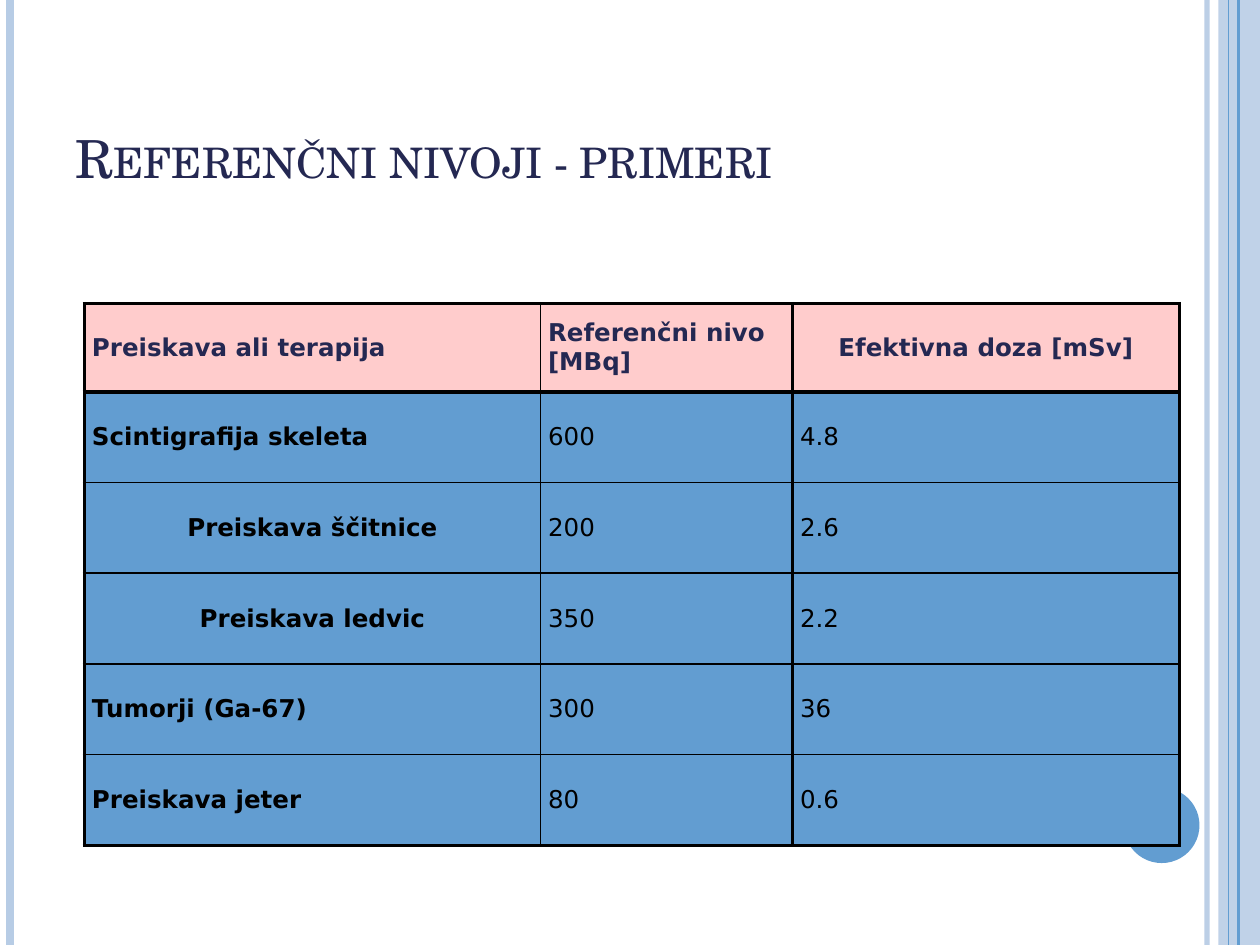
from lxml.etree import SubElement as Sub
from pptx import Presentation
from pptx.dml.color import RGBColor as RGB
from pptx.enum.shapes import MSO_CONNECTOR as LINK, MSO_SHAPE as SHAPE
from pptx.enum.text import MSO_ANCHOR as ANCHOR, PP_ALIGN as ALIGN
from pptx.oxml.ns import qn
from pptx.util import Inches, Pt

HUES = {"navy": "242852", "blue": "629DD1", "pale": "B7CCE5",
        "pink": "FFCCCC", "black": "000000"}


def write(frame, text, font="DejaVu Sans", size=14, hue="black", bold=False,
          align=ALIGN.LEFT, before=0, caps=False):
    par = frame.paragraphs[0]
    par.alignment = align
    par.space_before = Pt(before)
    run = par.add_run()
    run.text = text
    run.font.name = font
    run.font.size = Pt(size)
    run.font.bold = bold
    run.font.color.rgb = RGB.from_string(HUES[hue])
    if caps:
        run.font._element.set("cap", "small")


def tint(fill, hue, alpha=100):
    fill.solid()
    fill.fore_color.rgb = RGB.from_string(HUES[hue])
    if alpha < 100:
        node = fill._xPr.find(qn("a:solidFill"))[0]
        Sub(node, qn("a:alpha"), val=str(alpha * 1000))


deck = Presentation()
deck.slide_width, deck.slide_height = Inches(10), Inches(7.5)
slide = deck.slides.add_slide(deck.slide_layouts[5])
shapes = slide.shapes

# Side band and dot
band = shapes.add_shape(SHAPE.RECTANGLE, Inches(9.67), 0, Inches(0.33), Inches(7.5))
dot = shapes.add_shape(SHAPE.OVAL, Inches(8.92), Inches(6.25), Inches(0.6), Inches(0.6))
for shape, hue, alpha in [(band, "pale", 87), (dot, "blue", 100)]:
    shape.shadow.inherit = False
    shape.line.fill.background()
    tint(shape.fill, hue, alpha)

# Vertical rules
for x, hue, width, alpha in [(9.58, "pale", 3, 93), (0.08, "pale", 4.5, 100),
                             (9.83, "blue", 1.5, 100), (9.75, "blue", 0.75, 100)]:
    rule = shapes.add_connector(LINK.STRAIGHT, Inches(x), 0, Inches(x), Inches(7.5))
    rule.line.width = Pt(width)
    tint(rule.line.fill, hue, alpha)
    Sub(rule._element.spPr, qn("a:effectLst"))

# Title
title = shapes.title
title.left, title.top = Inches(0.5), Inches(0.3)
title.width, title.height = Inches(8.17), Inches(1.25)
title.text_frame.word_wrap = True
title.text_frame.vertical_anchor = ANCHOR.BOTTOM
write(title.text_frame, "Referenčni nivoji - primeri", font="TeX Gyre Schola",
      size=30, hue="navy", caps=True)

# Table
rows = [
    ("Preiskava ali terapija", "Referenčni nivo [MBq]", "Efektivna doza [mSv]"),
    ("Scintigrafija skeleta", "600", "4.8"),
    ("Preiskava ščitnice", "200", "2.6"),
    ("Preiskava ledvic", "350", "2.2"),
    ("Tumorji (Ga-67)", "300", "36"),
    ("Preiskava jeter", "80", "0.6"),
]
mid = {(0, 2), (2, 0), (3, 0)}  # centred cells
last = len(rows) - 1
frame = shapes.add_table(len(rows), 3, Inches(0.67), Inches(2.41),
                         Inches(8.69), Inches(4.3))
table = frame.table
for col, width in zip(table.columns, (3.62, 2, 3.07)):
    col.width = Inches(width)

for r, row in enumerate(rows):
    table.rows[r].height = Inches(0.72 if r else 0.7)
    for c, text in enumerate(row):
        cell = table.cell(r, c)
        cell.vertical_anchor = ANCHOR.MIDDLE
        cell.margin_left = cell.margin_right = Inches(0.06)
        cell.margin_top = cell.margin_bottom = Inches(0.04)
        write(cell.text_frame, text, hue="black" if r else "navy",
              bold=r == 0 or c == 0, before=2.8,
              align=ALIGN.CENTER if (r, c) in mid else ALIGN.LEFT)

        # Thick outer frame, header rule and last column
        thick = {"L": c != 1, "R": c > 0, "T": r < 2, "B": r in (0, last)}
        for side, heavy in thick.items():
            edge = Sub(cell._tc.get_or_add_tcPr(), qn("a:ln" + side),
                       w=str(Pt(2.25 if heavy else 1)))
            Sub(Sub(edge, qn("a:solidFill")), qn("a:srgbClr"), val=HUES["black"])
        tint(cell.fill, "blue" if r else "pink")

deck.save("out.pptx")
